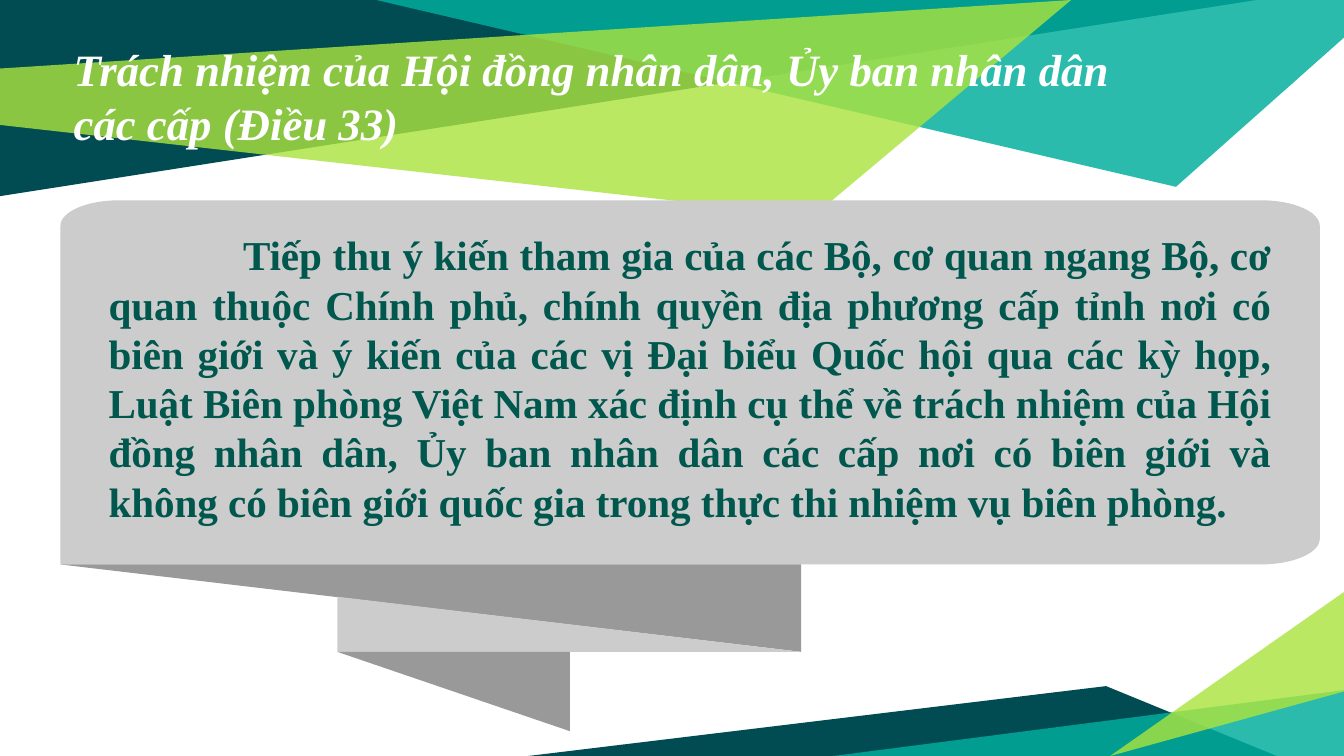
import math
from dataclasses import dataclass

import lxml.etree
import pptx
import pptx.dml.color
import pptx.enum.text
import pptx.oxml.ns
import pptx.util

Inches = pptx.util.Inches
ALIGN = pptx.enum.text.PP_ALIGN


@dataclass(frozen=True)
class Theme:
    """Colours, font and type sizes of the slide."""
    dark: str = "004C52"
    teal: str = "00AE9D"
    lime: str = "ABE33F"
    panel: str = "CCCCCC"
    fold: str = "999999"
    title: str = "FFFFFF"
    body: str = "00574E"
    font: str = "Times New Roman"
    title_size: int = 24
    body_size: int = 22


THEME = Theme()
WIDTH = 10
HEIGHT = WIDTH * 9 / 16
TITLE = "Trách nhiệm của Hội đồng nhân dân, Ủy ban nhân dân các cấp (Điều 33)"
BODY = (
    "Tiếp thu ý kiến tham gia của các Bộ, cơ quan ngang Bộ, cơ quan thuộc Chính phủ, "
    "chính quyền địa phương cấp tỉnh nơi có biên giới và ý kiến của các vị Đại biểu "
    "Quốc hội qua các kỳ họp, Luật Biên phòng Việt Nam xác định cụ thể về trách nhiệm "
    "của Hội đồng nhân dân, Ủy ban nhân dân các cấp nơi có biên giới và không có biên "
    "giới quốc gia trong thực thi nhiệm vụ biên phòng."
)


def rgb(value):
    """Return a colour object for a hex string."""
    return pptx.dml.color.RGBColor.from_string(value)


def add_polygon(s, box, points, color, opacity=100):
    """Draw a filled outline whose points are relative to the box."""
    left, top = box[:2]
    pts = [(Inches(left + x), Inches(top + y)) for x, y in points]
    builder = s.shapes.build_freeform(*pts[0], scale=1)
    builder.add_line_segments(pts[1:], close=True)
    sp = builder.convert_to_shape()
    sp.shadow.inherit = False
    sp.fill.solid()
    sp.fill.fore_color.rgb = rgb(color)
    sp.line.fill.background()
    if opacity < 100:
        clr = sp.fill._xPr.find(".//" + pptx.oxml.ns.qn("a:srgbClr"))
        alpha = lxml.etree.SubElement(clr, pptx.oxml.ns.qn("a:alpha"))
        alpha.set("val", str(opacity * 1000))


def add_text(s, box, text, color, inset, font, align=ALIGN.LEFT, indent=0):
    """Place one wrapped paragraph in the box."""
    tf = s.shapes.add_textbox(*map(Inches, box)).text_frame
    frame = {
        "word_wrap": True,
        "vertical_anchor": pptx.enum.text.MSO_ANCHOR.TOP,
        "margin_left": Inches(0.1),
        "margin_right": Inches(0.1),
        "margin_top": Inches(inset),
        "margin_bottom": Inches(inset),
    }
    for name, value in frame.items():
        setattr(tf, name, value)
    p = tf.paragraphs[0]
    p.alignment = align
    if indent:
        p._p.get_or_add_pPr().set("indent", str(Inches(indent)))
    r = p.add_run()
    r.text = text
    for name, value in font.items():
        setattr(r.font, name, value)
    r.font.color.rgb = rgb(color)


def add_top_band(s, box):
    """Draw the overlapping shards along the top of the box."""
    w = box[2]
    add_polygon(s, box, [(0, 0), (0, 1.46), (9.35, 0)], THEME.dark)
    add_polygon(s, box, [(2.8, 0), (8.75, 1.39), (w, 0.28), (w, 0)], THEME.teal, 83)
    add_polygon(s, box, [(0, 0.51), (0, 0.93), (6.05, 1.61), (7.97, 0)], THEME.lime, 81)


def add_bottom_corner(s, box):
    """Draw the overlapping shards in the lower right of the box."""
    w, h = box[2:]
    add_polygon(s, box, [(0, h), (5.57, h), (4.3, h - 0.52)], THEME.dark)
    add_polygon(s, box, [(w, h - 0.49), (w, h), (2.27, h)], THEME.teal, 83)
    add_polygon(s, box, [(w, h - 0.48), (w, h - 1.22), (4.33, h)], THEME.lime, 81)


def add_title(s, box):
    """Place the slide title in the box."""
    font = {
        "name": THEME.font,
        "size": pptx.util.Pt(THEME.title_size),
        "bold": True,
        "italic": True,
    }
    add_text(s, box, TITLE, THEME.title, 0.1, font)


def corner(cx, cy, start, rx, ry, steps=16):
    """Return the points of a clockwise quarter ellipse."""
    angles = [math.radians(start + 90 * i / steps) for i in range(steps + 1)]
    return [(cx + rx * math.cos(a), cy + ry * math.sin(a)) for a in angles]


def add_ribbon_panel(s, box):
    """Draw the rounded panel, its folded tail and the body text."""
    left, top, w, h = box
    rx, ry = 0.44, 0.19
    outline = [(0, h)]
    for cx, cy, start in ((rx, ry, 180), (w - rx, ry, 270), (w - rx, h - ry, 0)):
        outline += corner(cx, cy, start, rx, ry)
    add_polygon(s, box, outline, THEME.panel)

    inner, mid, outer = 2.06, 3.79, 5.51
    fold = h + 0.65
    add_polygon(s, box, [(outer, fold), (0, h), (outer, h)], THEME.fold)
    add_polygon(s, box, [(inner, fold), (outer, fold), (inner, h + 0.24)], THEME.panel)
    add_polygon(s, box, [(mid, fold + 0.59), (inner, fold), (mid, fold)], THEME.fold)

    font = {
        "name": THEME.font,
        "size": pptx.util.Pt(THEME.body_size),
        "bold": True,
    }
    text_box = (left + 0.26, top + 0.17, w - 0.52, 2.32)
    add_text(s, text_box, BODY, THEME.body, 0.05, font, ALIGN.JUSTIFY, 1)


def main():
    """Build and save the slide."""
    prs = pptx.Presentation()
    prs.slide_width, prs.slide_height = Inches(WIDTH), Inches(HEIGHT)
    s = prs.slides.add_slide(prs.slide_layouts[6])
    add_top_band(s, (0, 0, WIDTH, 1.61))
    add_bottom_corner(s, (3.93, 4.4, WIDTH - 3.93, HEIGHT - 4.4))
    add_title(s, (0.45, 0.21, 8.06, 0.94))
    add_ribbon_panel(s, (0.45, 1.49, 9.37, 2.71))
    prs.save("out.pptx")


if __name__ == "__main__":
    main()
